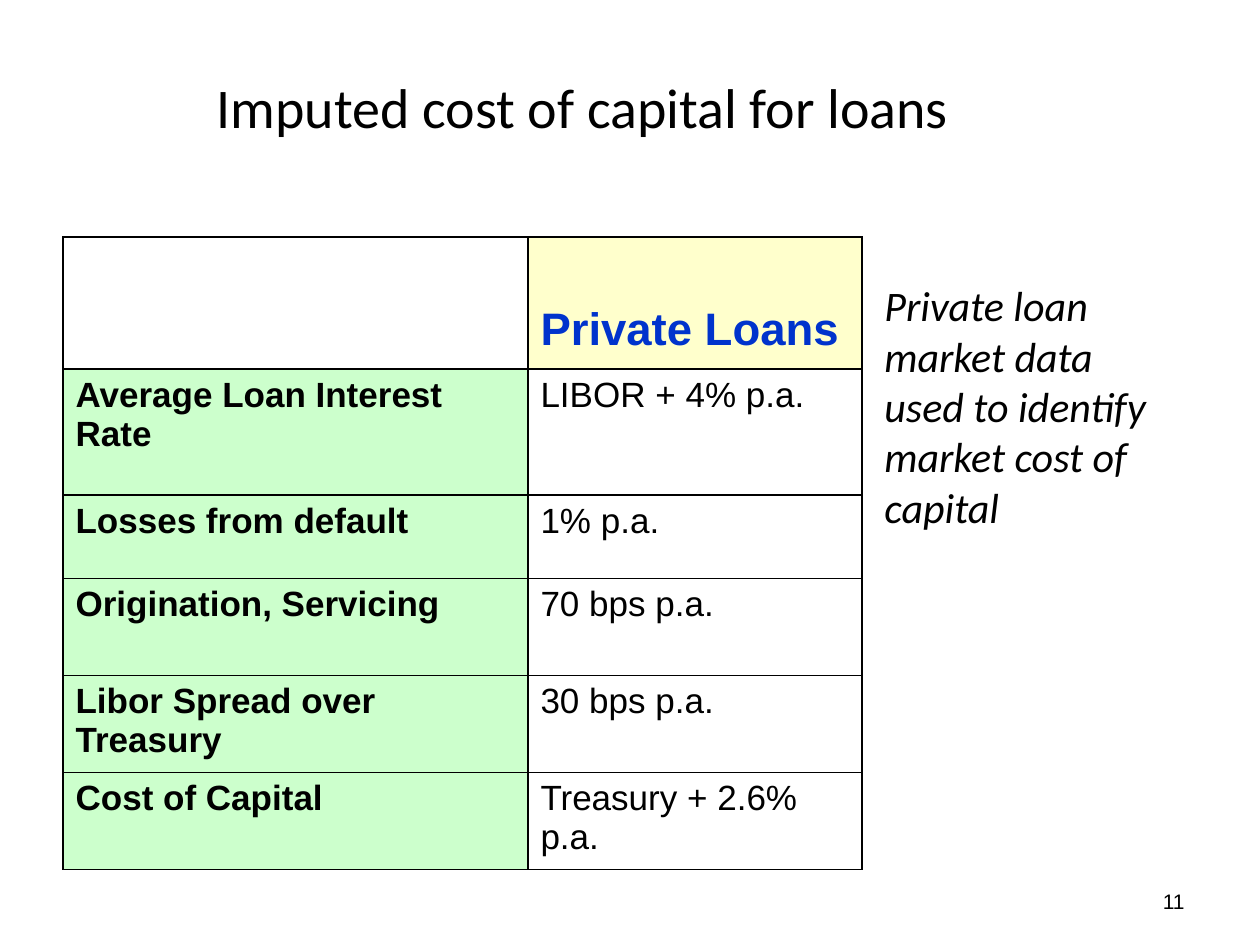
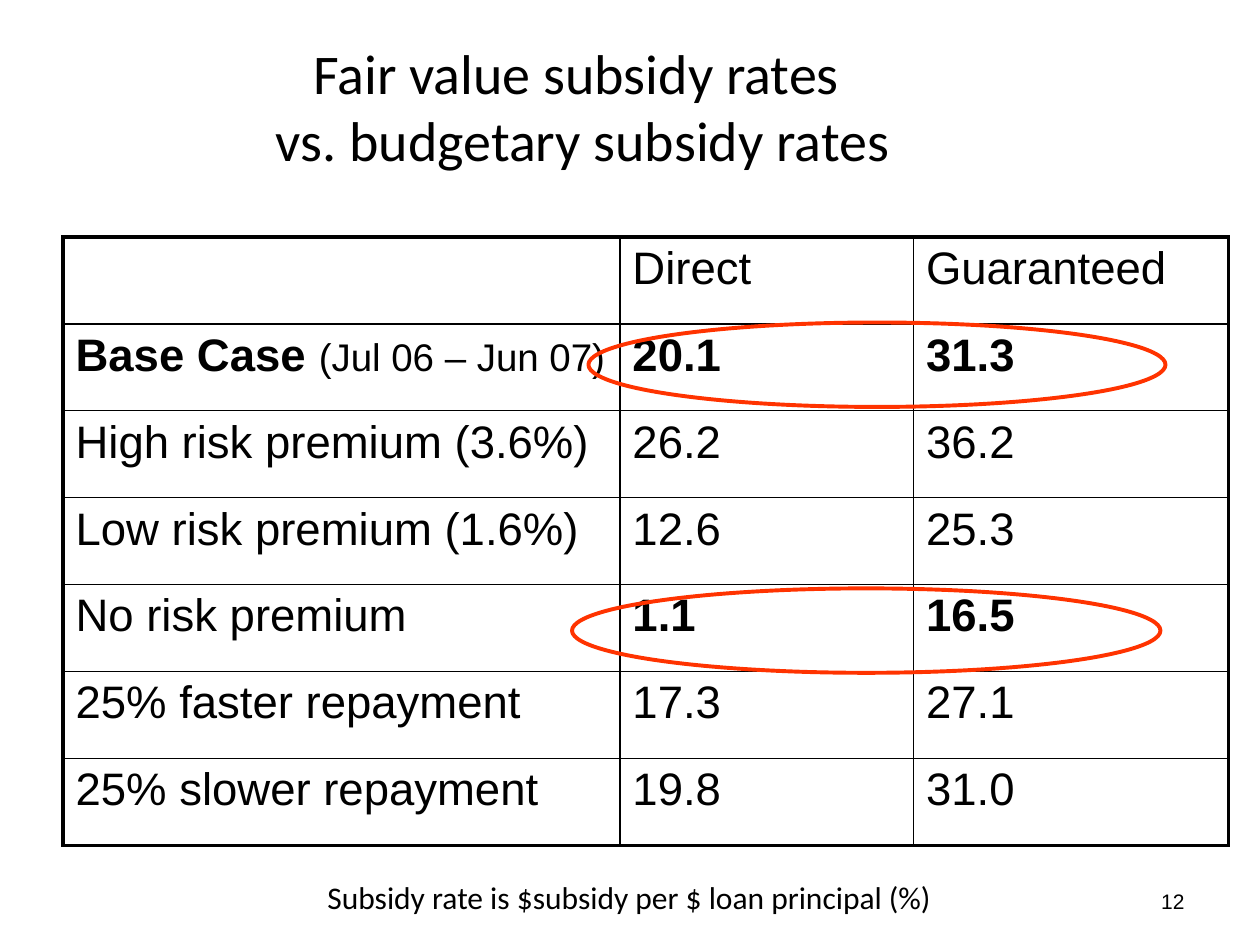
"""Build two slides on loan cost of capital and subsidy rates."""
import pptx
import pptx.dml.color
import pptx.enum.shapes
import pptx.enum.text
import pptx.oxml
import pptx.oxml.ns
import pptx.util
from dataclasses import dataclass
from pptx.util import Inches

ALIGN = pptx.enum.text.PP_ALIGN
ANCHOR = pptx.enum.text.MSO_ANCHOR
RGB = pptx.dml.color.RGBColor.from_string


@dataclass(frozen=True)
class Theme:
    heading_font: str = "Calibri"
    table_font: str = "Arial"
    ink: str = "000000"
    accent: str = "0033CC"
    header_fill: str = "FFFFCC"
    label_fill: str = "CCFFCC"
    ring: str = "FF3300"
    title_size: float = 32
    header_size: float = 26
    period_size: float = 22
    note_size: float = 24
    body_size: float = 20
    footnote_size: float = 18
    number_size: float = 12
    thin: float = 1
    thick: float = 2.25


theme = Theme()


def write(frame, lines, size, font, align=ALIGN.LEFT, italic=False):
    paragraph = frame.paragraphs[0]
    paragraph.alignment = align
    for index, line in enumerate(lines):
        if index:
            paragraph.add_line_break()
        for words, style in line:
            run = paragraph.add_run()
            run.text = words
            run.font.name = font
            run.font.size = pptx.util.Pt(style.get("size", size))
            run.font.bold = style.get("bold", False)
            run.font.italic = italic
            run.font.color.rgb = RGB(style.get("color", theme.ink))


def add_grid(slide, widths, heights, rows, size, outer):
    grid = slide.shapes.add_table(
        len(rows), len(widths), Inches(0.5), Inches(1.88),
        Inches(sum(widths)), Inches(sum(heights))).table
    grid.first_row = grid.horz_banding = False
    for column, width in zip(grid.columns, widths):
        column.width = Inches(width)
    for r, (height, row) in enumerate(zip(heights, rows)):
        grid.rows[r].height = Inches(height)
        for c, runs in enumerate(row):
            cell = grid.cell(r, c)
            cell.fill.background()
            write(cell.text_frame, [runs], size, theme.table_font)
            edges = {"L": c == 0, "R": c == len(widths) - 1,
                     "T": r == 0, "B": r == len(rows) - 1}
            for position, (side, is_outer) in enumerate(edges.items()):
                width = pptx.util.Pt(outer if is_outer else theme.thin)
                cell._tc.get_or_add_tcPr().insert(position, pptx.oxml.parse_xml(
                    f'<a:ln{side} {pptx.oxml.ns.nsdecls("a")} w="{int(width)}"><a:solidFill>'
                    f'<a:srgbClr val="{theme.ink}"/></a:solidFill></a:ln{side}>'))
    return grid


deck = pptx.Presentation()
deck.slide_width, deck.slide_height = Inches(10), Inches(7.5)

title_box = (0.5, 0.13, 8.25, 1.42)
number_box = (7.17, 6.95, 2.33, 0.4)
pages = [
    (11, ["Imputed cost of capital for loans"], (6.92, 2.17, 2.42, 2.12),
     "Private loan market data used to identify market cost of capital",
     theme.note_size, True),
    (12, ["Fair value subsidy rates ", "vs. budgetary subsidy rates"],
     (2.5, 6.92, 6.33, 0.4), "Subsidy rate is $subsidy per $ loan principal (%)",
     theme.footnote_size, False),
]
slides = []
for number, title, remark_box, remark, remark_size, italic in pages:
    slide = deck.slides.add_slide(deck.slide_layouts[6])
    slides.append(slide)
    for box, lines, size, font, align, anchor, slanted in [
        (number_box, [str(number)], theme.number_size, theme.table_font,
         ALIGN.RIGHT, ANCHOR.MIDDLE, False),
        (title_box, title, theme.title_size, theme.heading_font,
         ALIGN.CENTER, ANCHOR.MIDDLE, False),
        (remark_box, [remark], remark_size, theme.heading_font,
         ALIGN.LEFT, ANCHOR.TOP, italic),
    ]:
        frame = slide.shapes.add_textbox(*map(Inches, box)).text_frame
        frame.word_wrap = True
        frame.vertical_anchor = anchor
        write(frame, [[(line, {})] for line in lines], size, font, align, slanted)
capital_slide, subsidy_slide = slides

capital_items = [
    ("Average Loan Interest Rate", "LIBOR + 4% p.a."),
    ("Losses from default", "1% p.a."),
    ("Origination, Servicing", "70 bps p.a."),
    ("Libor Spread over Treasury", "30 bps p.a."),
    ("Cost of Capital", "Treasury + 2.6% p.a."),
]
loans_header = ("Private Loans",
                {"bold": True, "color": theme.accent, "size": theme.header_size})
capital_rows = [[[], [loans_header]]]
for label, rate in capital_items:
    capital_rows.append([[(label, {"bold": True})], [(rate, {})]])
capital = add_grid(capital_slide, [3.69, 2.65], [1.05, 1, 0.66, 0.77, 0.77, 0.77],
                   capital_rows, theme.body_size, theme.thin)
header_cell = capital.cell(0, 1)
header_cell.vertical_anchor = ANCHOR.BOTTOM
header_cell.margin_bottom = Inches(0.11)
filled_cells = [(header_cell, theme.header_fill)]
filled_cells += [(capital.cell(r, 0), theme.label_fill)
                 for r in range(1, len(capital_rows))]
for cell, color in filled_cells:
    cell.fill.solid()
    cell.fill.fore_color.rgb = RGB(color)

scenarios = [
    ("High risk premium (3.6%)", "26.2", "36.2", False),
    ("Low risk premium (1.6%)", "12.6", "25.3", False),
    ("No risk premium", "1.1", "16.5", True),
    ("25% faster repayment", "17.3", "27.1", False),
    ("25% slower repayment", "19.8", "31.0", False),
]
base_case = [("Base Case ", {"bold": True}),
             ("(Jul 06 – Jun 07)", {"size": theme.period_size})]
subsidy_rows = [
    [[], [("Direct", {})], [("Guaranteed", {})]],
    [base_case, [("20.1", {"bold": True})], [("31.3", {"bold": True})]],
]
for label, direct, guaranteed, bold in scenarios:
    subsidy_rows.append([[(label, {})], [(direct, {"bold": bold})],
                         [(guaranteed, {"bold": bold})]])
add_grid(subsidy_slide, [4.42, 2.33, 2.5], [0.69] * len(subsidy_rows),
         subsidy_rows, theme.header_size, theme.thick)

for ring_box in [(4.67, 2.56, 4.58, 0.67), (4.54, 4.67, 4.67, 0.67)]:
    ring = subsidy_slide.shapes.add_shape(
        pptx.enum.shapes.MSO_SHAPE.OVAL, *map(Inches, ring_box))
    ring.shadow.inherit = False
    ring.fill.background()
    ring.line.color.rgb = RGB(theme.ring)
    ring.line.width = pptx.util.Pt(theme.thick)

deck.save("out.pptx")
